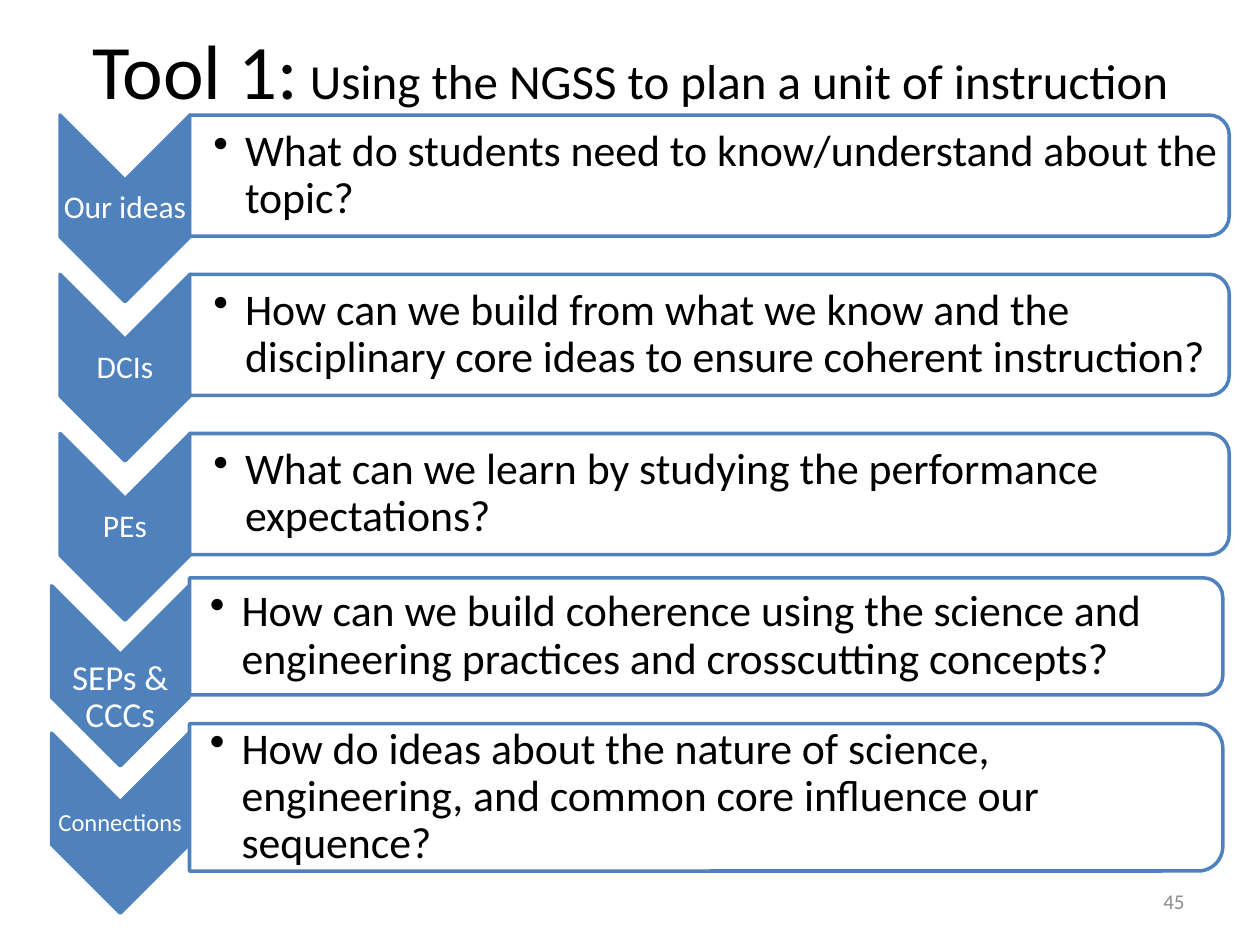
from dataclasses import dataclass

import pptx
import pptx.dml.color
import pptx.enum.dml
import pptx.enum.shapes
import pptx.enum.text
import pptx.oxml
import pptx.oxml.ns
import pptx.util
from pptx.util import Cm, Pt

ALIGN = pptx.enum.text.PP_ALIGN
SHAPES = pptx.enum.shapes.MSO_SHAPE


@dataclass(frozen=True)
class Theme:
    font: str = "Calibri"
    accent: str = "4F81BD"
    paper: str = "FFFFFF"
    ink: str = "000000"
    muted: str = "8C8C8C"
    title: int = 44
    subtitle: int = 28
    question: int = 25
    number: int = 12
    outline: int = 2


THEME = Theme()


@dataclass(frozen=True)
class Step:
    """One row: a downward chevron with its label, and a bar with a question. Lengths in cm."""
    label: str
    question: str
    top: float
    left: float = 1.21
    chevron_width: float = 2.62
    chevron_height: float = 3.76
    label_size: int = 18
    label_drop: float = 1.33
    bar_top: float = 2.32
    bar_width: float = 20.96
    bar_height: float = 2.44
    indent: float = 0.48


FIRST_TOP, PITCH = 2.32, 3.21
BAR_LEFT = 3.82
LABEL_HEIGHT = 1.11
BULLET_INDENT = 0.64

EVEN_STEPS = [
    ("Our ideas", "What do students need to know/understand about the topic?"),
    ("DCIs", "How can we build from what we know and the disciplinary core ideas "
             "to ensure coherent instruction?"),
    ("PEs", "What can we learn by studying the performance expectations?"),
]
LAST_FORMAT = dict(left=1.04, chevron_width=2.77, chevron_height=3.63,
                   bar_width=20.83, indent=0.41)


def list_steps():
    steps = []
    for index, (label, question) in enumerate(EVEN_STEPS):
        top = FIRST_TOP + index * PITCH
        steps.append(Step(label, question, top, bar_top=top))
    steps.append(Step(
        "SEPs & CCCs",
        "How can we build coherence using the science and engineering practices "
        "and crosscutting concepts?",
        11.81, label_size=20, label_drop=1.7, bar_top=11.65, bar_height=2.36, **LAST_FORMAT))
    steps.append(Step(
        "Connections",
        "How do ideas about the nature of science, engineering, and common core "
        "influence our sequence?",
        14.78, label_size=14, label_drop=1.27, bar_top=14.59, bar_height=2.97, **LAST_FORMAT))
    return steps


def set_values(target, values):
    for name, value in values.items():
        setattr(target, name, value)


def rgb(code):
    return pptx.dml.color.RGBColor.from_string(code)


def add_span(para, text, size, color):
    span = para.add_run()
    span.text = text
    set_values(span.font, {"name": THEME.font, "size": Pt(size)})
    span.font.color.rgb = rgb(color)


def format_frame(frame, side, edge):
    set_values(frame, {
        "word_wrap": True,
        "auto_size": pptx.enum.text.MSO_AUTO_SIZE.NONE,
        "vertical_anchor": pptx.enum.text.MSO_ANCHOR.MIDDLE,
        "margin_left": Cm(side), "margin_right": Cm(edge),
        "margin_top": Cm(edge), "margin_bottom": Cm(edge),
    })


def add_text(page, text, place, size, color, values, side=0.03, edge=0.03):
    box = page.shapes.add_textbox(*map(Cm, place))
    format_frame(box.text_frame, side, edge)
    para = box.text_frame.paragraphs[0]
    set_values(para, values)
    add_span(para, text, size, color)
    return para


def add_turned_shape(page, kind, left, top, width, height, fill):
    """Place a shape turned by 90 degrees so that it covers the given area."""
    shift = (width - height) / 2
    shape = page.shapes.add_shape(
        kind, Cm(left + shift), Cm(top - shift), Cm(height), Cm(width))
    shape.rotation = 90
    shape.shadow.inherit = False
    shape.fill.solid()
    shape.fill.fore_color.rgb = rgb(fill)
    shape.line.color.rgb = rgb(THEME.accent)
    shape.line.width = Pt(THEME.outline)
    return shape


def set_opacity(shape, percent):
    color = shape._element.spPr.find(
        pptx.oxml.ns.qn("a:solidFill")).find(pptx.oxml.ns.qn("a:srgbClr"))
    alpha = pptx.oxml.parse_xml(
        f'<a:alpha {pptx.oxml.ns.nsdecls("a")} val="{percent * 1000}"/>')
    color.append(alpha)


def add_bullet(para):
    properties = para._p.get_or_add_pPr()
    indent = Cm(BULLET_INDENT)
    properties.set("marL", str(indent))
    properties.set("indent", str(-indent))
    properties.append(pptx.oxml.parse_xml(
        f'<a:buChar {pptx.oxml.ns.nsdecls("a")} char="•"/>'))


def add_title(page):
    title = page.shapes.title
    set_values(title, {"left": Cm(0.76), "top": Cm(-0.2),
                       "width": Cm(23.88), "height": Cm(3.18)})
    format_frame(title.text_frame, 0.25, 0.13)
    title.text_frame.margin_right = Cm(0.25)
    para = title.text_frame.paragraphs[0]
    para.alignment = ALIGN.CENTER
    add_span(para, "Tool 1:", THEME.title, THEME.ink)
    add_span(para, " Using the NGSS to plan a unit of instruction", THEME.subtitle, THEME.ink)


def add_step(page, step):
    # Chevron and its label
    add_turned_shape(page, SHAPES.CHEVRON, step.left, step.top,
                     step.chevron_width, step.chevron_height, THEME.accent)
    add_text(page, step.label,
             (step.left, step.top + step.label_drop, step.chevron_width, LABEL_HEIGHT),
             step.label_size, THEME.paper, {"alignment": ALIGN.CENTER, "line_spacing": 0.9})

    # Bar and its question
    bar = add_turned_shape(page, SHAPES.ROUND_2_SAME_RECTANGLE, BAR_LEFT, step.bar_top,
                           step.bar_width, step.bar_height, THEME.paper)
    set_opacity(bar, 90)
    inset = 0.12
    para = add_text(page, step.question,
                    (BAR_LEFT, step.bar_top + inset,
                     step.bar_width - inset, step.bar_height - 2 * inset),
                    THEME.question, THEME.ink,
                    {"alignment": ALIGN.LEFT, "line_spacing": 0.9}, side=step.indent)
    add_bullet(para)


def main():
    deck = pptx.Presentation()
    set_values(deck, {"slide_width": Cm(25.4), "slide_height": Cm(19.05)})
    page = deck.slides.add_slide(deck.slide_layouts[5])

    add_title(page)
    for step in list_steps():
        add_step(page, step)

    # Page number
    add_text(page, "45", (18.21, 17.65, 5.92, 1.02), THEME.number, THEME.muted,
             {"alignment": ALIGN.RIGHT}, side=0.25, edge=0.25)

    deck.save("out.pptx")


if __name__ == "__main__":
    main()
